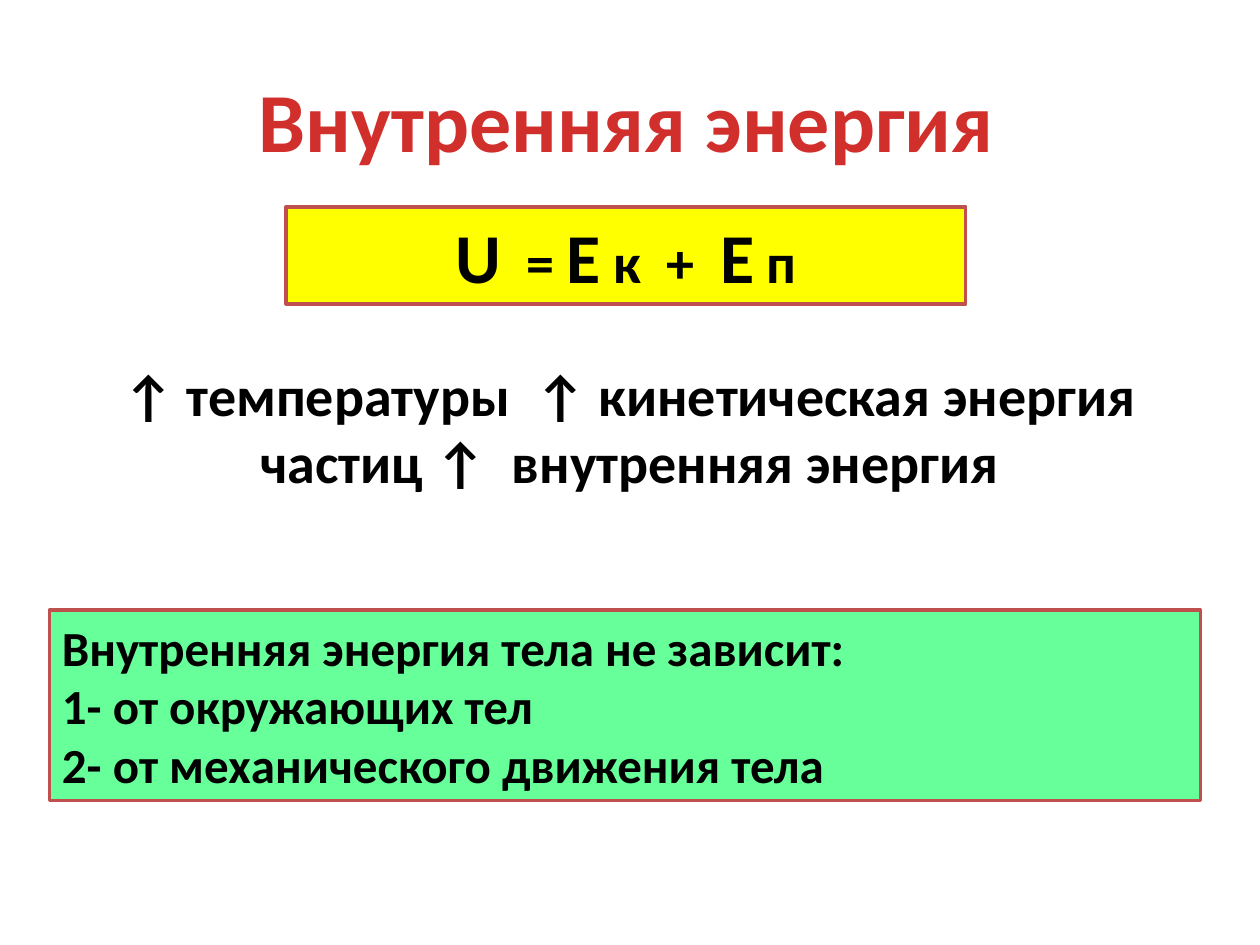
from pptx import Presentation
from pptx.dml.color import RGBColor
from pptx.enum.shapes import MSO_SHAPE
from pptx.enum.text import MSO_ANCHOR, PP_ALIGN
from pptx.util import Cm, Pt

RED = RGBColor(0xD0, 0x2F, 0x2C)
BRICK = RGBColor(0xC0, 0x50, 0x4D)
YELLOW = RGBColor(0xFF, 0xFF, 0x00)
GREEN = RGBColor(0x66, 0xFF, 0x99)
BLACK = RGBColor(0x00, 0x00, 0x00)
RECT = MSO_SHAPE.RECTANGLE
MIDDLE, TOP = MSO_ANCHOR.MIDDLE, MSO_ANCHOR.TOP
CENTER, LEFT = PP_ALIGN.CENTER, PP_ALIGN.LEFT
FONT = "Calibri"


def write(shape, lines, color=BLACK, align=CENTER, anchor=TOP):
    """Fill a shape with lines, each a list of (text, size) runs."""
    frame = shape.text_frame
    frame.word_wrap = True
    frame.vertical_anchor = anchor
    for i, line in enumerate(lines):
        para = frame.add_paragraph() if i else frame.paragraphs[0]
        para.alignment = align
        for text, size in line:
            run = para.add_run()
            run.text = text
            font = run.font
            font.name, font.size, font.bold = FONT, Pt(size), True
            font.color.rgb = color


def add_panel(slide, box, fill):
    """Add a filled rectangle with a brick outline."""
    panel = slide.shapes.add_shape(RECT, *map(Cm, box))
    panel.shadow.inherit = False
    panel.fill.solid()
    panel.fill.fore_color.rgb = fill
    panel.line.color.rgb = BRICK
    panel.line.width = Pt(2)
    return panel


def add_title(slide, box):
    """Add the red slide title."""
    title = slide.shapes.add_textbox(*map(Cm, box))
    write(title, [[("Внутренняя энергия", 48)]], RED, anchor=MIDDLE)


def add_claim(slide, box):
    """Add the statement on temperature and energy."""
    text = "↑ температуры  ↑ кинетическая энергия частиц ↑  внутренняя энергия"
    write(slide.shapes.add_textbox(*map(Cm, box)), [[(text, 32)]])


def add_formula(slide, box):
    """Add the energy formula with large symbols."""
    big, small = 40, 32
    runs = [("U", big), ("  = ", small), ("Е", big),
            (" к  +  ", small), ("Е", big), (" п", small)]
    write(add_panel(slide, box, YELLOW), [runs], anchor=MIDDLE)


def add_rules(slide, box):
    """Add the list of what internal energy does not depend on."""
    lines = ["Внутренняя энергия тела не зависит:",
             "1- от окружающих тел",
             "2- от механического движения тела"]
    write(add_panel(slide, box, GREEN), [[(line, 28)] for line in lines],
          align=LEFT, anchor=MIDDLE)


def main():
    """Build and save the slide."""
    deck = Presentation()
    deck.slide_width, deck.slide_height = Cm(25.4), Cm(19.05)
    slide = deck.slides.add_slide(deck.slide_layouts[6])
    add_title(slide, (1.2, 1.2, 22.86, 2.4))
    add_claim(slide, (1.2, 7.14, 23, 3))
    add_formula(slide, (5.77, 4.17, 13.7, 1.96))
    add_rules(slide, (1, 12.3, 23.2, 3.84))
    deck.save("out.pptx")


if __name__ == "__main__":
    main()
